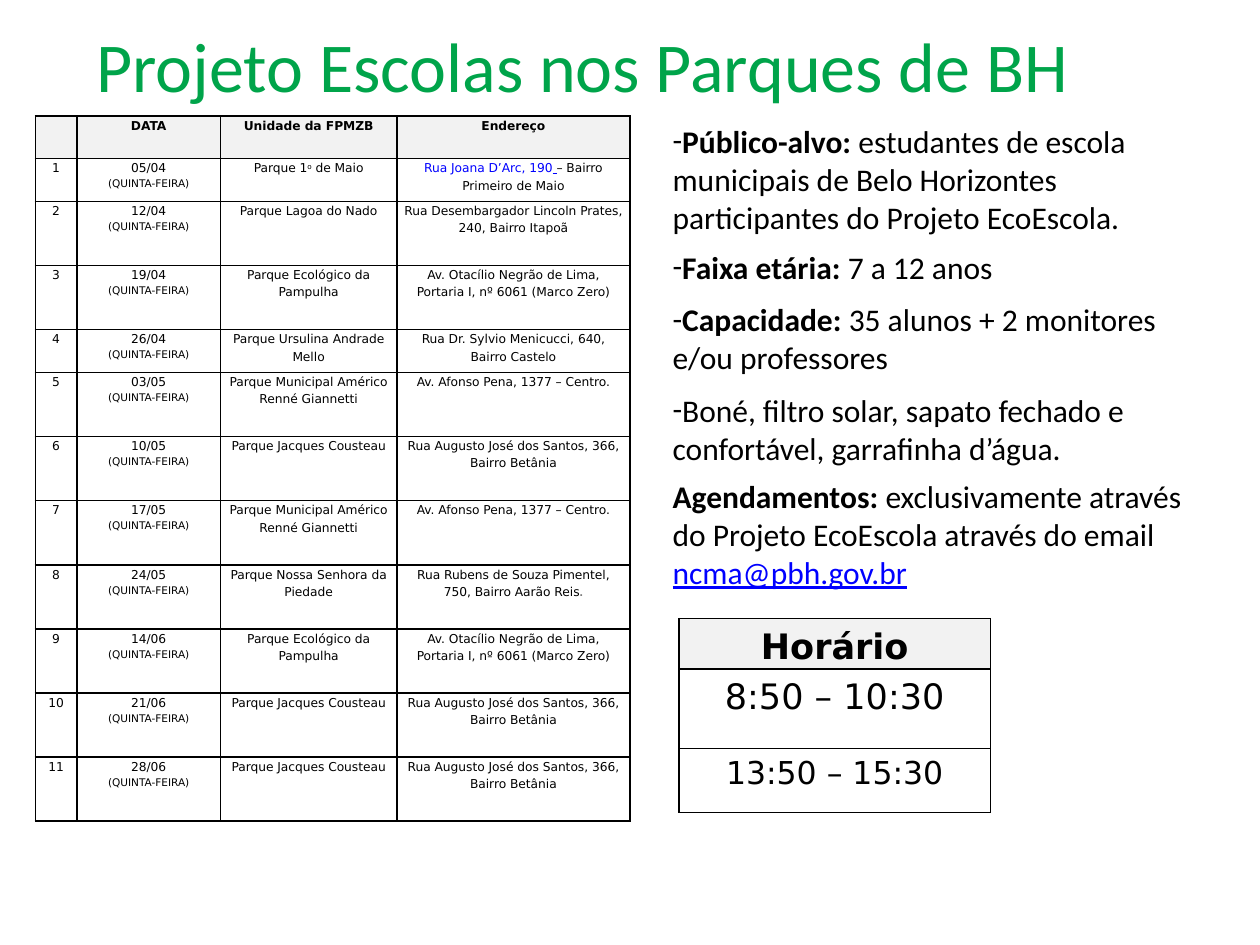
from dataclasses import dataclass

from lxml.etree import SubElement
from pptx import Presentation
from pptx.dml.color import RGBColor as Rgb
from pptx.enum.text import MSO_ANCHOR as Anchor, PP_ALIGN as Align
from pptx.oxml.ns import qn
from pptx.util import Inches, Pt


@dataclass(frozen=True)
class Theme:
    body_font: str = "Calibri"
    table_font: str = "DejaVu Sans"
    accent_font: str = "Arial"
    ink: str = "000000"
    green: str = "00A44A"
    link: str = "0000FF"
    muted: str = "7E7E7E"
    header: str = "F2F2F2"
    paper: str = "FFFFFF"
    title: int = 40
    body: int = 18
    schedule: int = 7
    weekday: int = 6
    hours: int = 20
    border: int = 1


@dataclass(frozen=True)
class Span:
    text: str
    bold: bool = False
    color: str = ""
    size: int = 0
    font: str = ""
    underline: bool = False
    raised: bool = False


class SlideBuilder:
    COLUMNS, ROWS = 100, 75

    def __init__(self, deck, theme):
        self.theme = theme
        self.column = deck.slide_width / self.COLUMNS
        self.row = deck.slide_height / self.ROWS
        self.slide = deck.slides.add_slide(deck.slide_layouts[6])

    def box(self, left, top, width, height):
        return (round(left * self.column), round(top * self.row),
                round(width * self.column), round(height * self.row))

    def add_spans(self, paragraph, spans, font, size, color):
        for span in spans:
            run = paragraph.add_run()
            run.text = span.text
            run.font.name = span.font or font
            run.font.size = Pt(span.size or size)
            run.font.bold = span.bold
            run.font.underline = span.underline
            run.font.color.rgb = Rgb.from_string(span.color or color)
            if span.raised:
                run.font._element.set("baseline", "30000")

    def title(self, text, place):
        frame = self.slide.shapes.add_textbox(*self.box(*place)).text_frame
        frame.word_wrap = True
        frame.vertical_anchor = Anchor.MIDDLE
        heading = frame.paragraphs[0]
        heading.alignment = Align.CENTER
        self.add_spans(heading, [Span(text)], self.theme.body_font, self.theme.title, self.theme.green)

    def details(self, items, place):
        frame = self.slide.shapes.add_textbox(*self.box(*place)).text_frame
        frame.word_wrap = True
        for index, (dashed, gap, spans) in enumerate(items):
            paragraph = frame.add_paragraph() if index else frame.paragraphs[0]
            if gap:
                paragraph.space_before = Pt(gap)
            if dashed:
                settings = paragraph._p.get_or_add_pPr()
                settings.set("marL", "0")
                settings.set("indent", "0")
                SubElement(settings, qn("a:buFont")).set("typeface", self.theme.body_font)
                SubElement(settings, qn("a:buChar")).set("char", "-")
            self.add_spans(paragraph, spans, self.theme.body_font, self.theme.body, self.theme.ink)

    def outline(self, cell):
        settings = cell._tc.get_or_add_tcPr()
        for side in ("lnL", "lnR", "lnT", "lnB"):
            line = SubElement(settings, qn(f"a:{side}"), w=str(int(Pt(self.theme.border))))
            SubElement(SubElement(line, qn("a:solidFill")), qn("a:srgbClr")).set("val", self.theme.ink)

    def cell(self, cell, paragraphs, size, fill):
        self.outline(cell)
        cell.fill.solid()
        cell.fill.fore_color.rgb = Rgb.from_string(fill)
        cell.margin_left = cell.margin_right = Inches(0.05)
        cell.margin_top = cell.margin_bottom = 0
        for index, spans in enumerate(paragraphs):
            paragraph = cell.text_frame.add_paragraph() if index else cell.text_frame.paragraphs[0]
            paragraph.alignment = Align.CENTER
            paragraph.line_spacing = 1.2
            self.add_spans(paragraph, spans, self.theme.table_font, size, self.theme.ink)

    def table(self, records, left, top, widths, heights, size):
        place = self.box(left, top, sum(widths), sum(heights))
        table = self.slide.shapes.add_table(len(heights), len(widths), *place).table
        table.first_row = table.horz_banding = False
        for column, width in zip(table.columns, widths):
            column.width = round(width * self.column)
        for row, height in zip(table.rows, heights):
            row.height = round(height * self.row)
        for y, record in enumerate(records):
            for x, paragraphs in enumerate(record):
                fill = self.theme.paper if y else self.theme.header
                self.cell(table.cell(y, x), paragraphs, size, fill)


def plain(text, **style):
    return [[Span(text, **style)]]


def main():
    theme = Theme()
    deck = Presentation()
    deck.slide_width, deck.slide_height = Inches(10), Inches(7.5)
    page = SlideBuilder(deck, theme)

    pampulha = ("Parque Ecológico da Pampulha",
                "Av. Otacílio Negrão de Lima, Portaria I, nº 6061 (Marco Zero)")
    americo = ("Parque Municipal Américo Renné Giannetti", "Av. Afonso Pena, 1377 – Centro.")
    cousteau = ("Parque Jacques Cousteau", "Rua Augusto José dos Santos, 366, Bairro Betânia")
    first_park = [[Span("Parque 1"), Span("o", raised=True), Span(" de Maio")]]
    first_address = [[Span("Rua Joana D’Arc, 190", color=theme.link),
                      Span(" ", color=theme.link, underline=True),
                      Span("– Bairro Primeiro de Maio")]]
    piedade_address = [[Span("Rua Rubens de Souza Pimentel, 750, Bairro Aarão Reis"),
                        Span(".", bold=True, color=theme.muted, font=theme.accent_font)]]
    visits = [
        ("05/04", first_park, first_address),
        ("12/04", "Parque Lagoa do Nado", "Rua Desembargador Lincoln Prates, 240, Bairro Itapoã"),
        ("19/04", *pampulha),
        ("26/04", "Parque Ursulina Andrade Mello", "Rua Dr. Sylvio Menicucci, 640, Bairro Castelo"),
        ("03/05", *americo),
        ("10/05", *cousteau),
        ("17/05", *americo),
        ("24/05", "Parque Nossa Senhora da Piedade", piedade_address),
        ("14/06", *pampulha),
        ("21/06", *cousteau),
        ("28/06", *cousteau),
    ]
    weekday = [Span("(QUINTA-FEIRA)", size=theme.weekday)]
    schedule = [[[]] + [plain(label, bold=True) for label in ("DATA", "Unidade da FPMZB", "Endereço")]]
    for number, (date, *location) in enumerate(visits, 1):
        schedule.append([plain(str(number)), [[Span(date)], weekday]]
                        + [plain(part) if isinstance(part, str) else part for part in location])

    short_rows = (0, 1, 4)
    heights = [3.4 if index in short_rows else 5.09 for index in range(len(schedule))]

    page.title("Projeto Escolas nos Parques de BH", (1.2, -1.1, 90, 12.5))
    page.table(schedule, 2.8, 9.2, [3.3, 11.4, 14, 18.5], heights, theme.schedule)
    page.details([
        (True, 0, [Span("Público-alvo:", bold=True),
                   Span(" estudantes de escola municipais de Belo Horizontes participantes do Projeto EcoEscola.")]),
        (True, 7, [Span("Faixa etária:", bold=True), Span(" 7 a 12 anos")]),
        (True, 8.5, [Span("Capacidade:", bold=True), Span(" 35 alunos + 2 monitores e/ou professores")]),
        (True, 8.5, [Span("Boné, filtro solar, sapato fechado e confortável, garrafinha d’água.")]),
        (False, 6, [Span("Agendamentos: ", bold=True),
                    Span("exclusivamente através do Projeto EcoEscola através do email "),
                    Span("ncma@pbh.gov.br", color=theme.link, underline=True)]),
    ], (52.4, 9.2, 45.3, 46.3))
    page.table([[plain("Horário", bold=True)],
                [plain("8:50 – 10:30")],
                [plain("13:50 – 15:30", size=theme.body)]],
               53.9, 49.1, [24.7], [3.8, 6.3, 5.1], theme.hours)
    deck.save("out.pptx")


if __name__ == "__main__":
    main()
